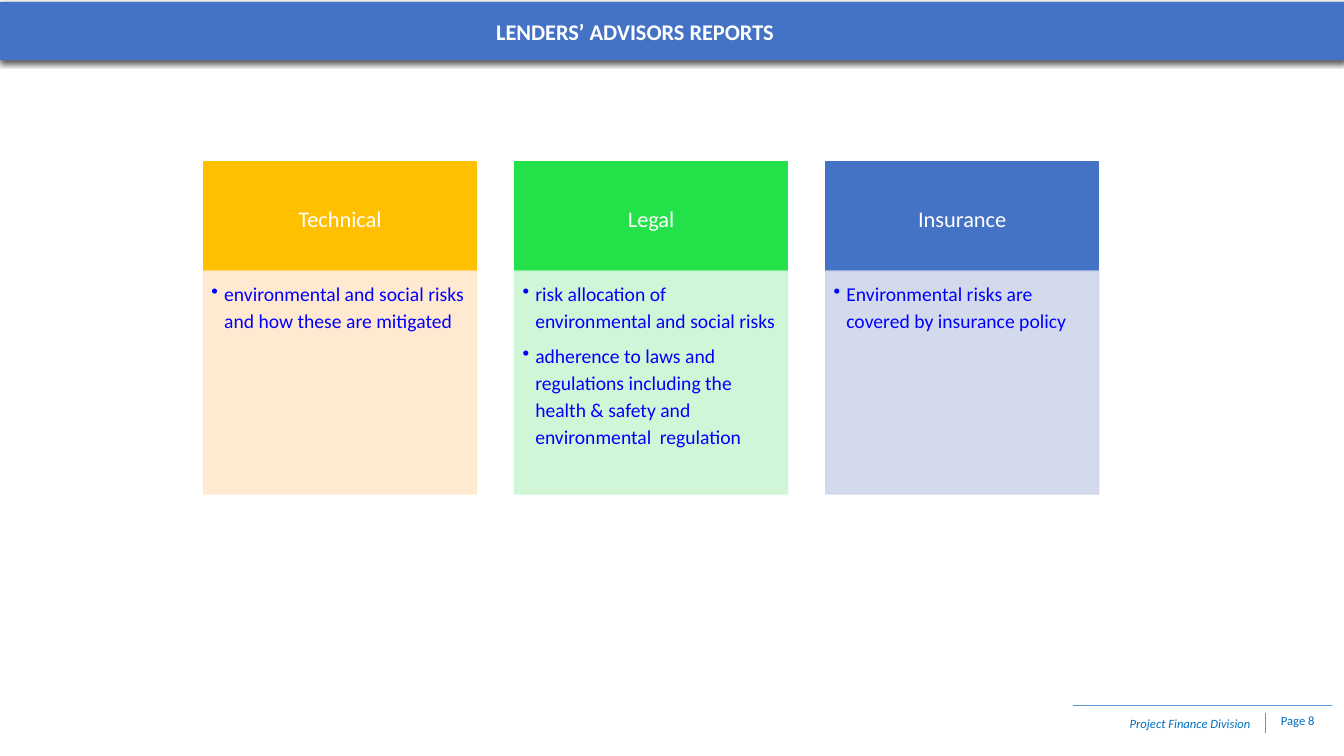
from lxml import etree
from pptx import Presentation
from pptx.dml.color import RGBColor
from pptx.enum.shapes import MSO_CONNECTOR, MSO_SHAPE
from pptx.enum.text import MSO_ANCHOR, MSO_AUTO_SIZE, PP_ALIGN
from pptx.oxml import parse_xml
from pptx.oxml.ns import nsdecls, qn
from pptx.util import Cm, Pt

WHITE = RGBColor(0xFF, 0xFF, 0xFF)
BLUE = RGBColor(0x44, 0x72, 0xC4)
GOLD = RGBColor(0xFF, 0xC0, 0x00)
GREEN = RGBColor(0x23, 0xE1, 0x48)
CREAM = RGBColor(0xFF, 0xE8, 0xCC)
MINT = RGBColor(0xCC, 0xF6, 0xD3)
LILAC = RGBColor(0xCF, 0xD6, 0xEA)
INK = RGBColor(0x00, 0x00, 0xFF)
FOOT = RGBColor(0x00, 0x70, 0xC0)
RULE = RGBColor(0x5B, 0x9B, 0xD5)

prs = Presentation()
prs.slide_width, prs.slide_height = Cm(33.87), Cm(19.05)
slide = prs.slides.add_slide(prs.slide_layouts[5])
shapes = slide.shapes


def add_box(left, top, width, height, color):
    box = shapes.add_shape(MSO_SHAPE.RECTANGLE, Cm(left), Cm(top), Cm(width), Cm(height))
    box.shadow.inherit = False
    box.fill.solid()
    box.fill.fore_color.rgb = color
    box.line.color.rgb = color
    box.line.width = Pt(1)
    return box


def style(para, size, color, align):
    para.font.name = "Calibri"
    para.font.size = Pt(size)
    para.font.color.rgb = color
    para.alignment = align


# Title bar, placed behind the title
bar = add_box(0, 0.05, 33.87, 1.47, BLUE)
bar.line.fill.background()
effects = bar._element.spPr.find(qn("a:effectLst"))
effects.append(parse_xml(
    f'<a:outerShdw {nsdecls("a")} blurRad="57150" dist="19050" dir="5400000" algn="ctr" rotWithShape="0">'
    '<a:srgbClr val="000000"><a:alpha val="63000"/></a:srgbClr></a:outerShdw>'))
shapes._spTree.insert(2, bar._element)

title = shapes.title
title.left, title.top, title.width, title.height = Cm(4.32), Cm(0.05), Cm(23.37), Cm(1.6)
frame = title.text_frame
frame.text = "LENDERS’ ADVISORS REPORTS"
frame.auto_size = MSO_AUTO_SIZE.NONE
frame.vertical_anchor = MSO_ANCHOR.MIDDLE
para = frame.paragraphs[0]
style(para, 16, WHITE, PP_ALIGN.CENTER)
para.font.bold = True
para.line_spacing = 0.9

# Advisor columns
columns = [
    ("Technical", GOLD, CREAM, ["environmental and social risks and how these are mitigated"]),
    ("Legal", GREEN, MINT, [
        "risk allocation of environmental and social risks",
        "adherence to laws and regulations including the health & safety and environmental \tregulation"]),
    ("Insurance", BLUE, LILAC, ["Environmental risks are covered by insurance policy"]),
]
for i, (name, dark, light, points) in enumerate(columns):
    left = 5.13 + 7.84 * i
    head = add_box(left, 4.08, 6.88, 2.75, dark)
    frame = head.text_frame
    frame.text = name
    frame.vertical_anchor = MSO_ANCHOR.MIDDLE
    para = frame.paragraphs[0]
    style(para, 16, WHITE, PP_ALIGN.CENTER)
    para.line_spacing = 1.14
    para.space_after = Pt(6)

    body = add_box(left, 6.83, 6.88, 5.62, light)
    for color in body._element.spPr.iter(qn("a:srgbClr")):
        etree.SubElement(color, qn("a:alpha"), val="90000")
    frame = body.text_frame
    frame.text = "\n".join(points)
    frame.vertical_anchor = MSO_ANCHOR.TOP
    frame.margin_left = frame.margin_top = Cm(0.2)
    frame.margin_right, frame.margin_bottom = Cm(0.28), Cm(0.3)
    for para in frame.paragraphs:
        style(para, 14, INK, PP_ALIGN.LEFT)
        para.line_spacing = 1.14
        para.space_after = Pt(6)
        props = para._p.get_or_add_pPr()
        props.set("marL", str(Cm(0.32)))
        props.set("indent", str(-Cm(0.32)))
        props.set("defTabSz", str(Cm(1.73)))
        bullet = parse_xml(f'<a:buChar {nsdecls("a")} char="•"/>')
        props.find(qn("a:defRPr")).addprevious(bullet)

# Footer
notes = [
    ("Project Finance Division", 28.22, 17.73, 3.61, PP_ALIGN.LEFT, True),
    ("Page 8", 31.83, 17.65, 1.75, PP_ALIGN.CENTER, False),
]
for text, left, top, width, align, slant in notes:
    frame = shapes.add_textbox(Cm(left), Cm(top), Cm(width), Cm(1.02)).text_frame
    frame.text = text
    frame.word_wrap = True
    frame.vertical_anchor = MSO_ANCHOR.MIDDLE
    para = frame.paragraphs[0]
    style(para, 9, FOOT, align)
    para.font.italic = slant

for x1, y1, x2, y2 in [(27.05, 17.78, 33.58, 17.78), (31.9, 17.96, 31.9, 18.47)]:
    rule = shapes.add_connector(MSO_CONNECTOR.STRAIGHT, Cm(x1), Cm(y1), Cm(x2), Cm(y2))
    rule.line.color.rgb = RULE
    rule.line.width = Pt(0.5)
    etree.SubElement(rule._element.spPr, qn("a:effectLst"))

prs.save("out.pptx")
